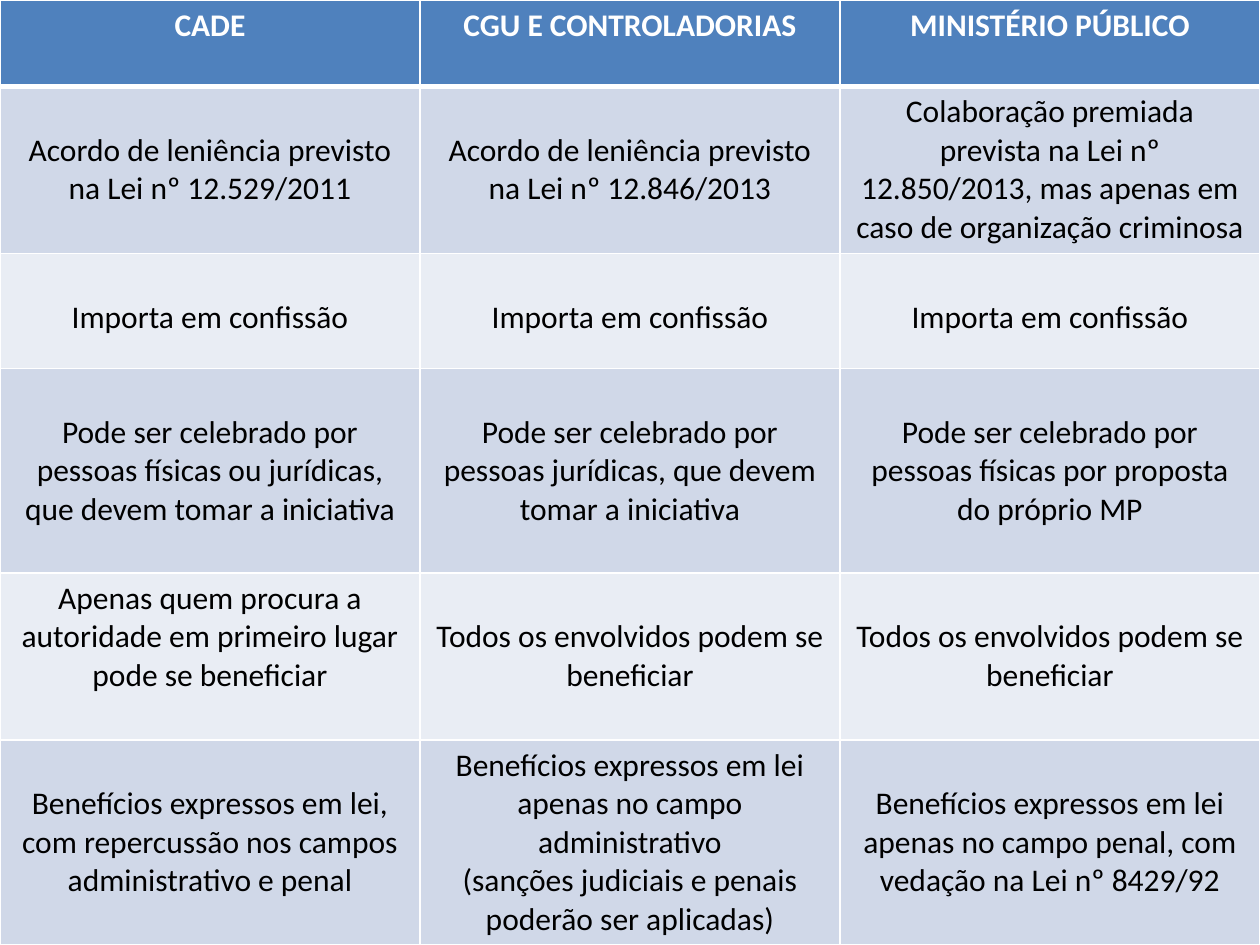
from lxml import etree
from pptx import Presentation
from pptx.dml.color import RGBColor
from pptx.enum import text
from pptx.oxml import ns
from pptx.util import Pt

WHITE = RGBColor(0xFF, 0xFF, 0xFF)
BLACK = RGBColor(0x00, 0x00, 0x00)
BLUE = RGBColor(0x4F, 0x81, 0xBD)
BANDS = (RGBColor(0xE9, 0xED, 0xF4), RGBColor(0xD0, 0xD8, 0xE8))

SLIDE_WIDTH, SLIDE_HEIGHT = 720, 540
ROW_HEIGHTS = (49.5, 95.5, 65.5, 117, 95.5, 117)
TOP_MARGIN = 3.6
LINE_HEIGHT = 22
# Cells (row, column) whose text starts at the top; the others start one line lower.
TOP_CELLS = {(0, 0), (0, 1), (0, 2), (1, 2), (4, 0), (5, 1)}

COMPARISON = (
    ("CADE", "CGU E CONTROLADORIAS", "MINISTÉRIO PÚBLICO"),
    ("Acordo de leniência previsto na Lei nº 12.529/2011",
     "Acordo de leniência previsto na Lei nº 12.846/2013",
     "Colaboração premiada prevista na Lei nº 12.850/2013, "
     "mas apenas em caso de organização criminosa"),
    ("Importa em confissão",) * 3,
    ("Pode ser celebrado por pessoas físicas ou jurídicas, que devem tomar a iniciativa",
     "Pode ser celebrado por pessoas jurídicas, que devem tomar a iniciativa",
     "Pode ser celebrado por pessoas físicas por proposta do próprio MP"),
    ("Apenas quem procura a autoridade em primeiro lugar pode se beneficiar",
     "Todos os envolvidos podem se beneficiar",
     "Todos os envolvidos podem se beneficiar"),
    ("Benefícios expressos em lei, com repercussão nos campos administrativo e penal",
     "Benefícios expressos em lei apenas no campo administrativo\n"
     "(sanções judiciais e penais poderão ser aplicadas)",
     "Benefícios expressos em lei apenas no campo penal, com vedação na Lei nº 8429/92"),
)


def set_borders(cell, top, bottom):
    """Draw white borders; top and bottom are widths in points, the sides are 1 pt."""
    properties = cell._tc.get_or_add_tcPr()
    widths = (("lnL", 1), ("lnR", 1), ("lnT", top), ("lnB", bottom))
    for position, (side, width) in enumerate(widths):
        line = etree.Element(ns.qn(f"a:{side}"), w=str(Pt(width)))
        fill = etree.SubElement(line, ns.qn("a:solidFill"))
        etree.SubElement(fill, ns.qn("a:srgbClr"), val=str(WHITE))
        properties.insert(position, line)


def fill_cell(cell, row, column, wording):
    is_header = row == 0
    cell.fill.solid()
    cell.fill.fore_color.rgb = BLUE if is_header else BANDS[row % 2]
    set_borders(cell, top=3 if row == 1 else 1, bottom=3 if is_header else 1)
    lead = 0 if (row, column) in TOP_CELLS else LINE_HEIGHT
    cell.margin_top = Pt(TOP_MARGIN + lead)
    cell.text = wording
    for paragraph in cell.text_frame.paragraphs:
        paragraph.alignment = text.PP_ALIGN.CENTER
        paragraph.font.name = "Calibri"
        paragraph.font.size = Pt(18)
        paragraph.font.bold = is_header
        paragraph.font.color.rgb = WHITE if is_header else BLACK


def add_comparison(slide, left, top, width, height):
    columns = len(COMPARISON[0])
    table = slide.shapes.add_table(
        len(COMPARISON), columns, Pt(left), Pt(top), Pt(width), Pt(height)).table
    for column in table.columns:
        column.width = Pt(width / columns)
    for row, wordings in enumerate(COMPARISON):
        table.rows[row].height = Pt(ROW_HEIGHTS[row] * height / sum(ROW_HEIGHTS))
        for column, wording in enumerate(wordings):
            fill_cell(table.cell(row, column), row, column, wording)


def main():
    presentation = Presentation()
    presentation.slide_width = Pt(SLIDE_WIDTH)
    presentation.slide_height = Pt(SLIDE_HEIGHT)
    slide = presentation.slides.add_slide(presentation.slide_layouts[6])
    add_comparison(slide, 0, 0, SLIDE_WIDTH, SLIDE_HEIGHT)
    presentation.save("out.pptx")


if __name__ == "__main__":
    main()
